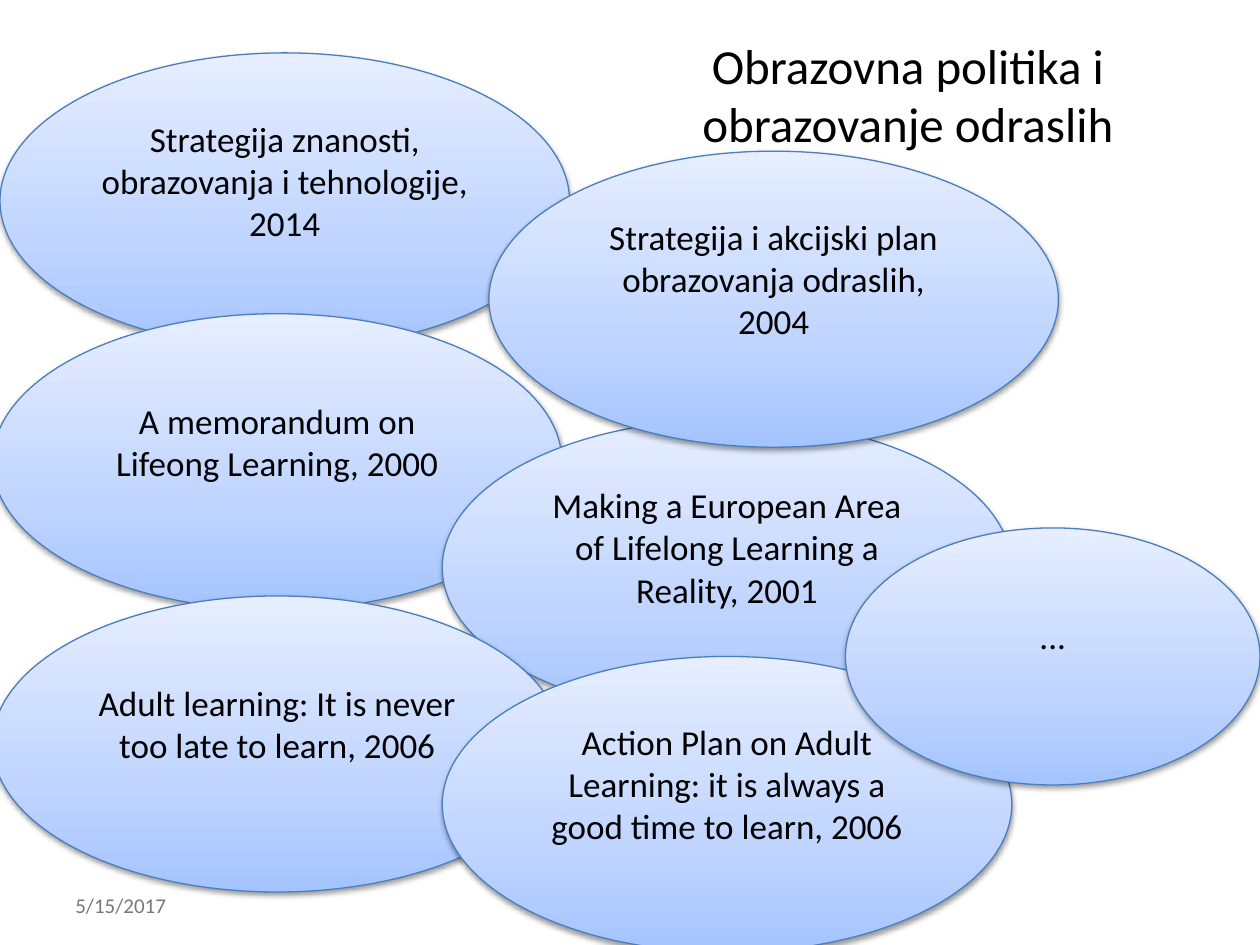
from copy import deepcopy

from lxml import etree
from pptx import Presentation, util as u
from pptx.dml import color
from pptx.enum import shapes, text
from pptx.oxml import ns

WIDTH, HEIGHT = u.Inches(10), u.Inches(7.5)
FONT = "Calibri"
GRADIENT = [(0, "A4C4FF"), (0.35, "BFD4FF"), (1, "E6EEFF")]
LARGE, SMALL = (45.2, 31.33), (32.9, 27.2)
LEFT_COLUMN, MIDDLE_COLUMN = -0.6, 35.1

DOCUMENTS = [
    ("Strategija znanosti, obrazovanja i tehnologije, 2014", 0, 5.6, LARGE),
    ("A memorandum on Lifeong Learning, 2000", LEFT_COLUMN, 33.2, LARGE),
    ("Making a European Area of Lifelong Learning a Reality, 2001", MIDDLE_COLUMN, 44.4, LARGE),
    ("Adult learning: It is never too late to learn, 2006", LEFT_COLUMN, 63.07, LARGE),
    ("Strategija i akcijski plan obrazovanja odraslih, 2004", 38.8, 16, LARGE),
    ("Action Plan on Adult Learning: it is always a good time to learn, 2006",
     MIDDLE_COLUMN, 69.47, LARGE),
    ("...", 67.1, 55.87, SMALL),
]


def rgb(value):
    return color.RGBColor.from_string(value)


def place(left, top, width, height):
    return (int(WIDTH * left / 100), int(HEIGHT * top / 100),
            int(WIDTH * width / 100), int(HEIGHT * height / 100))


def write(shape, wording, size, ink, align):
    frame = shape.text_frame
    frame.word_wrap = True
    frame.vertical_anchor = text.MSO_ANCHOR.MIDDLE
    paragraph = frame.paragraphs[0]
    paragraph.alignment = align
    run = paragraph.add_run()
    run.text = wording
    run.font.name = FONT
    run.font.size = u.Pt(size)
    run.font.color.rgb = rgb(ink)


def add_label(slide, wording, box, size, ink, align):
    write(slide.shapes.add_textbox(*place(*box)), wording, size, ink, align)


def fill_gradient(shape):
    shape.fill.gradient()
    shape.fill.gradient_angle = 90
    stops = shape._element.spPr.find(".//" + ns.qn("a:gsLst"))
    stops.append(deepcopy(stops[0]))
    for stop, (position, value) in zip(shape.fill.gradient_stops, GRADIENT):
        stop.position = position
        stop.color.rgb = rgb(value)


def add_shadow(shape):
    shape.shadow.inherit = False
    effects = shape._element.spPr.find(ns.qn("a:effectLst"))
    shadow = etree.SubElement(effects, ns.qn("a:outerShdw"), blurRad=str(u.Pt(3.1)),
                              dist=str(u.Pt(1.6)), dir="5400000", rotWithShape="0")
    ink = etree.SubElement(shadow, ns.qn("a:srgbClr"), val="000000")
    etree.SubElement(ink, ns.qn("a:alpha"), val="38000")


def add_document(slide, wording, left, top, size):
    ellipse = slide.shapes.add_shape(shapes.MSO_SHAPE.OVAL, *place(left, top, *size))
    fill_gradient(ellipse)
    ellipse.line.color.rgb = rgb("4B7EBC")
    ellipse.line.width = u.Pt(0.75)
    add_shadow(ellipse)
    write(ellipse, wording, 20, "000000", text.PP_ALIGN.CENTER)
    ellipse.text_frame.margin_bottom = int(HEIGHT * 0.05)


def main():
    presentation = Presentation()
    presentation.slide_width, presentation.slide_height = WIDTH, HEIGHT
    slide = presentation.slides.add_slide(presentation.slide_layouts[6])
    add_label(slide, "5/15/2017", (5, 93.07, 23.3, 5.33), 12, "777877", text.PP_ALIGN.LEFT)
    add_label(slide, "Obrazovna politika i obrazovanje odraslih",
              (45.9, 1.6, 52.3, 16.67), 28, "000000", text.PP_ALIGN.CENTER)
    for document in DOCUMENTS:
        add_document(slide, *document)
    presentation.save("out.pptx")


if __name__ == "__main__":
    main()
